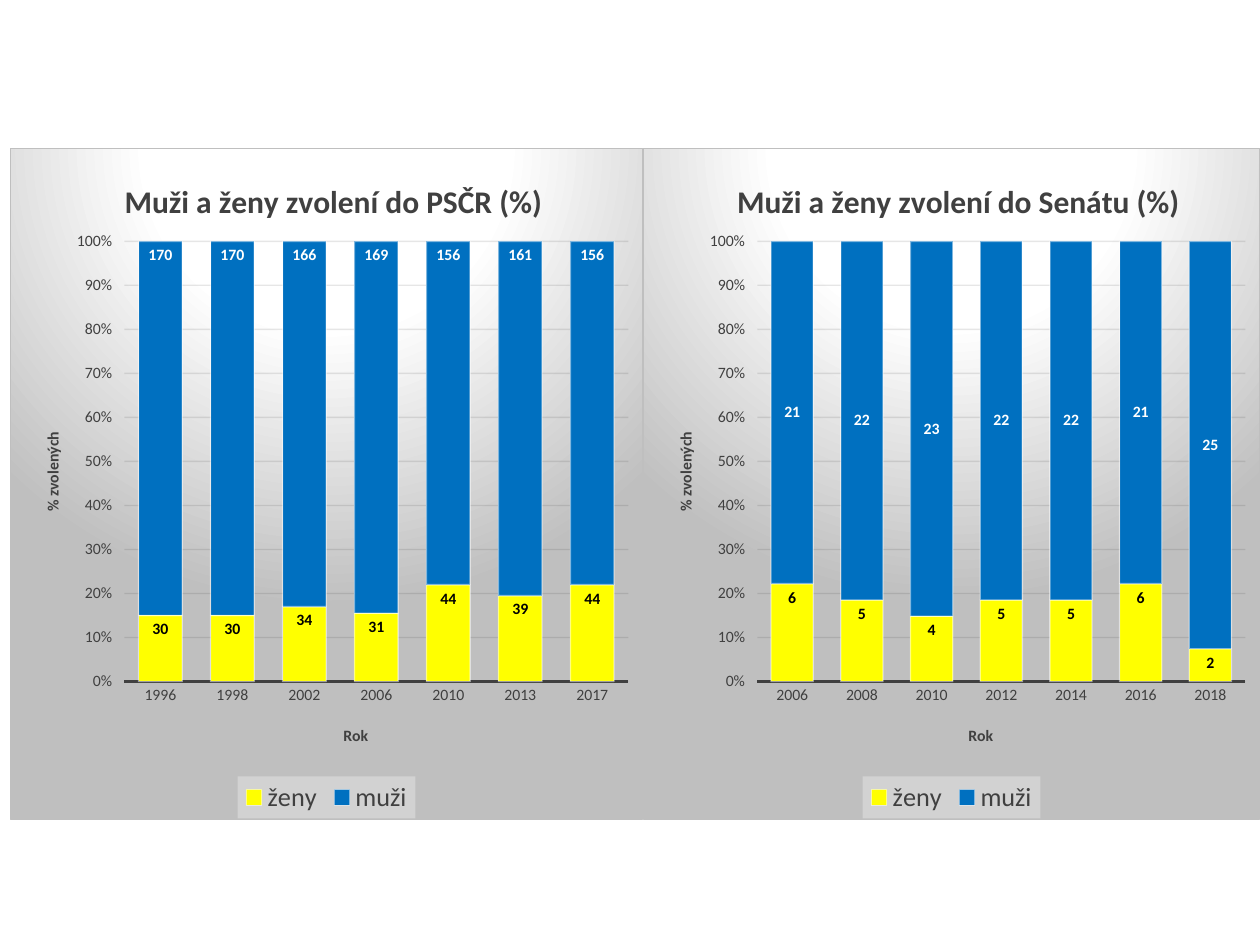
import pptx
import pptx.chart.data
import pptx.dml.color
import pptx.enum.chart
import pptx.oxml
import pptx.oxml.ns
import pptx.util

SCALE = 914400 / 126
COLORS = {"text": "404040", "women": "FFFF00", "men": "0070C0", "white": "FFFFFF",
          "black": "000000", "grid": "0D0D0D", "edge": "BFBFBF", "legend": "F2F2F2"}
NAMESPACES = pptx.oxml.ns.nsdecls("a", "c")
POSITION = pptx.enum.chart.XL_LABEL_POSITION
TICK = pptx.enum.chart.XL_TICK_MARK
CHARTS = [
    {"box": (643, 148, 617, 672), "title": "Muži a ženy zvolení do Senátu (%)", "title_width": 441,
     "years": [2006, 2008, 2010, 2012, 2014, 2016, 2018], "women": [6, 5, 4, 5, 5, 6, 2],
     "men": [21, 22, 23, 22, 22, 21, 25], "men_position": POSITION.CENTER},
    {"box": (10, 148, 633, 672), "title": "Muži a ženy zvolení do PSČR (%)", "title_width": 416,
     "years": [1996, 1998, 2002, 2006, 2010, 2013, 2017], "women": [30, 30, 34, 31, 44, 39, 44],
     "men": [170, 170, 166, 169, 156, 161, 156], "men_position": POSITION.INSIDE_END},
]


def px(length):
    """Turn pixels into EMU."""
    return pptx.util.Emu(round(length * SCALE))


def rgb(name):
    """Look up a named colour."""
    return pptx.dml.color.RGBColor.from_string(COLORS[name])


def set_values(target, values):
    """Set each attribute of the target from a dict."""
    for name, value in values.items():
        setattr(target, name, value)


def set_font(font, size, color="text", bold=False):
    """Style a font."""
    set_values(font, {"name": "Calibri", "size": pptx.util.Pt(size), "bold": bold})
    font.color.rgb = rgb(color)


def set_line(line, color, width, opacity=100):
    """Style a line, with opacity in percent."""
    line.color.rgb = rgb(color)
    line.width = pptx.util.Pt(width)
    if opacity < 100:
        color_element = line.fill._xPr.find(".//" + pptx.oxml.ns.qn("a:srgbClr"))
        color_element.append(pptx.oxml.parse_xml(
            f'<a:alpha {NAMESPACES} val="{opacity * 1000}"/>'))


def set_layout(element, index, chart_size, box, inner=False):
    """Place a chart part at a pixel box relative to its chart."""
    for old in element.findall(pptx.oxml.ns.qn("c:layout")):
        element.remove(old)
    target = '<c:layoutTarget val="inner"/>' if inner else ""
    modes = '<c:xMode val="edge"/><c:yMode val="edge"/>'
    sizes = "".join(f'<c:{tag} val="{length / chart_size[i % 2]:.4f}"/>'
                    for i, (tag, length) in enumerate(zip("xywh", box)))
    element.insert(index, pptx.oxml.parse_xml(
        f"<c:layout {NAMESPACES}><c:manualLayout>{target}{modes}{sizes}"
        "</c:manualLayout></c:layout>"))


def set_title(title, text, size):
    """Write a chart or axis title."""
    title.text_frame.text = text
    set_font(title.text_frame.paragraphs[0].runs[0].font, size, bold=True)


def style_axes(chart):
    """Style both axes and the grid."""
    for axis, text, tick in ((chart.category_axis, "Rok", TICK.NONE),
                             (chart.value_axis, "% zvolených", TICK.OUTSIDE)):
        set_font(axis.tick_labels.font, 9)
        set_title(axis.axis_title, text, 9)
        set_values(axis, {"major_tick_mark": tick, "minor_tick_mark": TICK.NONE})
    set_line(chart.category_axis.format.line, "text", 1.5)
    axis = chart.value_axis
    set_values(axis, {"minimum_scale": 0, "maximum_scale": 1, "major_unit": 0.1,
                      "has_major_gridlines": True})
    set_values(axis.tick_labels, {"number_format": "0%", "number_format_is_linked": False})
    axis.format.line.fill.background()
    set_line(axis.major_gridlines.format.line, "grid", 0.75, 10)
    body = chart.element.xpath(".//c:valAx/c:title//a:bodyPr")[0]
    body.set("rot", "-5400000")
    body.set("vert", "horz")


def style_series(chart, men_position):
    """Colour and label the two series."""
    plot = chart.plots[0]
    set_values(plot, {"gap_width": 65, "overlap": 100, "vary_by_categories": False})
    styles = (("women", "black", POSITION.INSIDE_END), ("men", "white", men_position))
    for series, (fill, label, position) in zip(plot.series, styles):
        series.format.fill.solid()
        series.format.fill.fore_color.rgb = rgb(fill)
        set_line(series.format.line, "white", 0.75, 50)
        labels = series.data_labels
        set_values(labels, {"show_value": True, "position": position,
                            "number_format": "0", "number_format_is_linked": False})
        set_font(labels.font, 9, label, True)


def style_legend(chart):
    """Put a pale legend below the plot."""
    chart.has_legend = True
    set_values(chart.legend, {"position": pptx.enum.chart.XL_LEGEND_POSITION.BOTTOM,
                              "include_in_layout": False})
    set_font(chart.legend.font, 15)
    chart.element.xpath(".//c:legend/c:txPr")[0].addprevious(pptx.oxml.parse_xml(
        f'<c:spPr {NAMESPACES}><a:solidFill><a:srgbClr val="{COLORS["legend"]}">'
        '<a:alpha val="39000"/></a:srgbClr></a:solidFill><a:ln><a:noFill/></a:ln></c:spPr>'))


def style_background(chart):
    """Give the chart area a radial gradient and a thin border."""
    stops = "".join(f'<a:gs pos="{place * 1000}"><a:srgbClr val="{COLORS[color]}"/></a:gs>'
                    for place, color in ((0, "white"), (39, "white"), (100, "edge")))
    chart.element.xpath("./c:txPr")[0].addprevious(pptx.oxml.parse_xml(
        f'<c:spPr {NAMESPACES}><a:gradFill><a:gsLst>{stops}</a:gsLst><a:path path="circle">'
        '<a:fillToRect l="50000" t="-80000" r="50000" b="180000"/></a:path></a:gradFill>'
        f'<a:ln w="9525"><a:solidFill><a:srgbClr val="{COLORS["edge"]}"/></a:solidFill></a:ln>'
        "</c:spPr>"))


def arrange_parts(chart, size, title_width):
    """Place titles, plot and legend inside the chart."""
    width = size[0]
    plot_width = width - 128
    places = (
        ("./c:chart/c:title", 1, ((width - title_width) / 2, 25)),
        (".//c:catAx/c:title", 1, (114 + plot_width / 2 - 36, 575)),
        (".//c:valAx/c:title", 1, (29, 281)),
        (".//c:legend", 1, ((width - 178) / 2, 629, 178, 42)),
    )
    for query, index, box in places:
        set_layout(chart.element.xpath(query)[0], index, size, box)
    set_layout(chart.element.xpath(".//c:plotArea")[0], 0, size, (114, 93, plot_width, 441), True)


def add_election_chart(slide, box, title, title_width, years, women, men, men_position):
    """Add one chart of elected women and men in the given box."""
    data = pptx.chart.data.CategoryChartData(number_format="0")
    data.categories = [str(year) for year in years]
    data.add_series("ženy", women)
    data.add_series("muži", men)
    kind = pptx.enum.chart.XL_CHART_TYPE.COLUMN_STACKED_100
    chart = slide.shapes.add_chart(kind, *map(px, box), data).chart
    set_font(chart.font, 10, "black")
    set_title(chart.chart_title, title, 18)
    style_axes(chart)
    style_series(chart, men_position)
    style_legend(chart)
    style_background(chart)
    arrange_parts(chart, box[2:], title_width)


def main():
    """Build and save the slide."""
    presentation = pptx.Presentation()
    set_values(presentation, {"slide_width": px(1260), "slide_height": px(945)})
    slide = presentation.slides.add_slide(presentation.slide_layouts[6])
    for values in CHARTS:
        add_election_chart(slide, **values)
    presentation.save("out.pptx")


if __name__ == "__main__":
    main()
